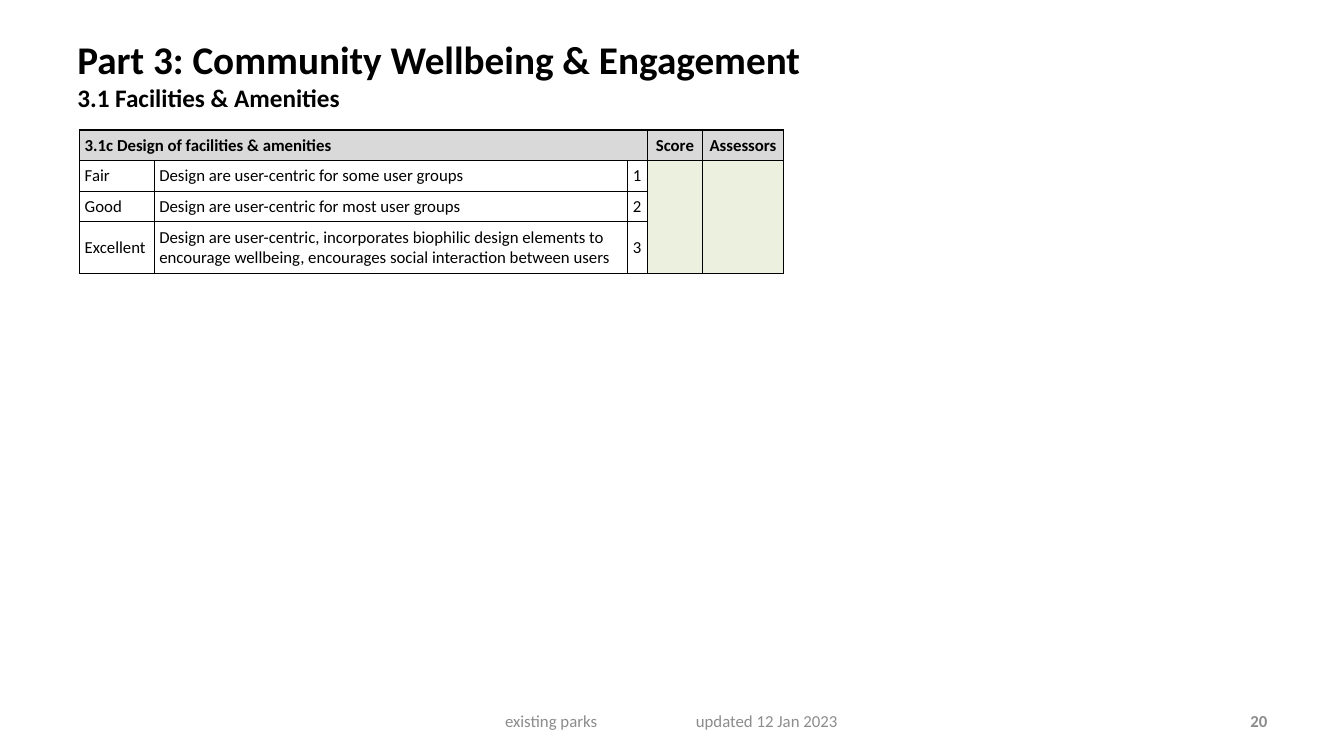
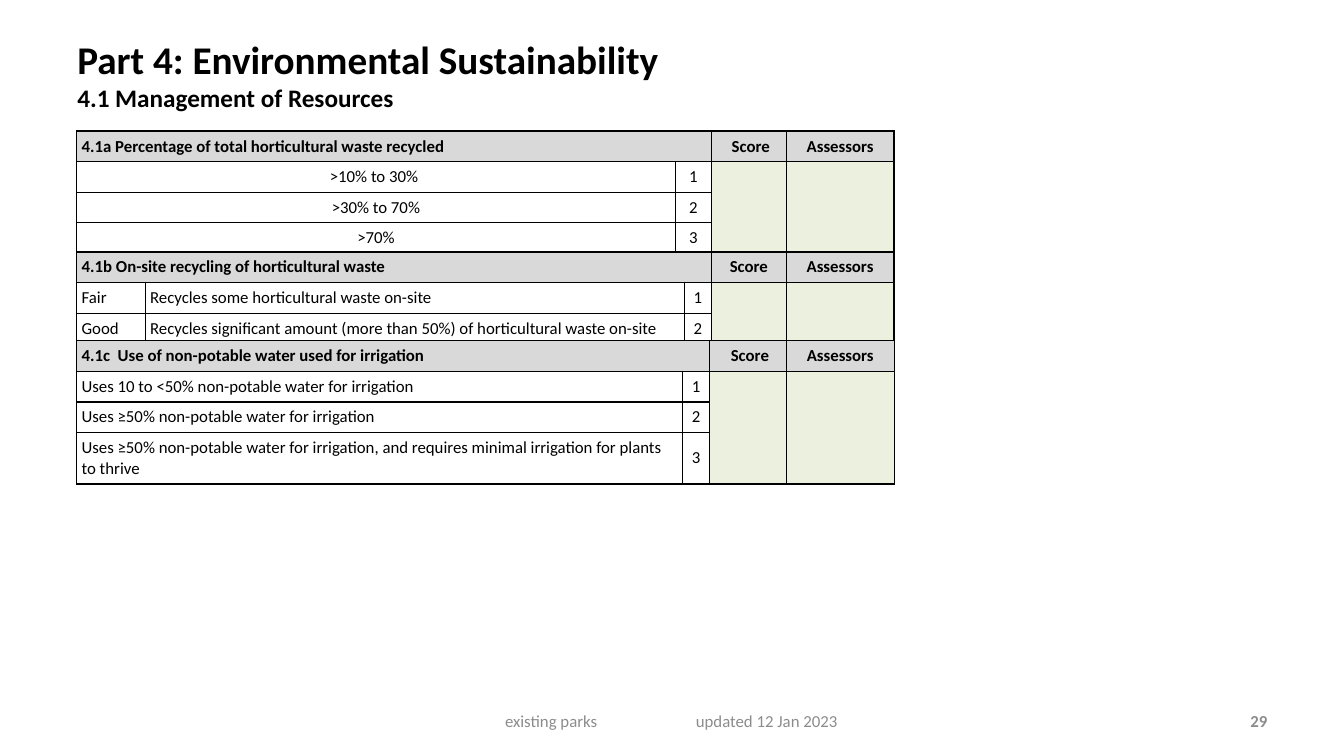
"""Build two score-sheet slides for the assessment of existing parks."""
from dataclasses import dataclass

from lxml import etree
from pptx import Presentation
from pptx import util as u
from pptx.dml.color import RGBColor
from pptx.enum import text
from pptx.oxml import ns


@dataclass(frozen=True)
class Theme:
    font: str = "Calibri"
    ink: str = "000000"
    muted: str = "8C8C8C"
    heading: str = "D9D9D9"
    entry: str = "EBF1DE"
    paper: str = "FFFFFF"
    title_size: int = 28
    subtitle_size: int = 18
    body_size: int = 12
    border: float = 1


THEME = Theme()
LEFT, CENTER, RIGHT = text.PP_ALIGN.LEFT, text.PP_ALIGN.CENTER, text.PP_ALIGN.RIGHT
LINE, TALL_LINE = 4.05, 6.8

SLIDES = [
    dict(
        title="Part 3: Community Wellbeing & Engagement",
        subtitle="3.1 Facilities & Amenities",
        number="20",
        criteria=[
            dict(
                left=5.93, top=17.2, columns=[5.55, 35.18, 1.5, 4.13, 6],
                heading="3.1c Design of facilities & amenities", score="Score",
                align=LEFT, last_line=TALL_LINE,
                levels=[
                    ["Fair", "Design are user-centric for some user groups", "1"],
                    ["Good", "Design are user-centric for most user groups", "2"],
                    ["Excellent", "Design are user-centric, incorporates biophilic design "
                     "elements to encourage wellbeing, encourages social interaction "
                     "between users", "3"],
                ],
            ),
        ],
    ),
    dict(
        title="Part 4: Environmental Sustainability",
        subtitle="4.1 Management of Resources",
        number="29",
        criteria=[
            dict(
                left=5.7, top=17.33, columns=[44.55, 2.7, 5.55, 8.03],
                heading="4.1a Percentage of total horticultural waste recycled",
                score=" Score", align=CENTER, last_line=LINE,
                levels=[[">10% to 30% ", "1"], [">30% to 70%", "2"], [">70%", "3"]],
            ),
            dict(
                left=5.7, top=33.33, columns=[5.1, 40.12, 2.03, 5.55, 8.03],
                heading="4.1b On-site recycling of horticultural waste",
                score="Score", align=LEFT, last_line=LINE,
                levels=[
                    ["Fair", "Recycles some horticultural waste on-site", "1"],
                    ["Good", "Recycles significant amount (more than 50%) of "
                     "horticultural waste on-site", "2"],
                ],
            ),
            dict(
                left=5.7, top=45.07, columns=[45.08, 2.03, 5.7, 8.03],
                heading="4.1c  Use of non-potable water used for irrigation",
                score=" Score", align=LEFT, last_line=TALL_LINE,
                levels=[
                    ["Uses 10 to <50% non-potable water for irrigation", "1"],
                    ["Uses ≥50% non-potable water for irrigation", "2"],
                    ["Uses ≥50% non-potable water for irrigation, and requires "
                     "minimal irrigation for plants to thrive", "3"],
                ],
            ),
        ],
    ),
]

deck = Presentation()
deck.slide_width, deck.slide_height = u.Inches(13.33), u.Inches(7.5)
COL, ROW = deck.slide_width / 100, deck.slide_height / 100


def style(paragraph, size, color, bold=False, align=LEFT):
    """Align a paragraph and format its runs."""
    paragraph.alignment = align
    for run in paragraph.runs:
        run.font.name, run.font.size, run.font.bold = THEME.font, u.Pt(size), bold
        run.font.color.rgb = RGBColor.from_string(color)


def format_cell(cell, fill):
    """Give a table cell its borders, margins, anchor and fill."""
    properties = cell._tc.get_or_add_tcPr()
    for side in ("a:lnL", "a:lnR", "a:lnT", "a:lnB"):
        edge = etree.SubElement(properties, ns.qn(side), w=str(u.Pt(THEME.border)))
        ink = etree.SubElement(edge, ns.qn("a:solidFill"))
        etree.SubElement(ink, ns.qn("a:srgbClr"), val=THEME.ink)
    cell.margin_left = cell.margin_right = u.Inches(0.05)
    cell.margin_top = cell.margin_bottom = u.Inches(0.05)
    cell.vertical_anchor = text.MSO_ANCHOR.MIDDLE
    cell.fill.solid()
    cell.fill.fore_color.rgb = RGBColor.from_string(fill)
    if not cell.text:
        ending = cell.text_frame.paragraphs[0]._p.get_or_add_endParaRPr()
        ending.set("sz", str(THEME.body_size * 100))


for page in SLIDES:
    slide = deck.slides.add_slide(deck.slide_layouts[5])

    title = slide.shapes.title
    title.left, title.top = int(5 * COL), int(4 * ROW)
    title.width, title.height = int(77.7 * COL), int(13.2 * ROW)
    title.text_frame.text = f"{page['title']}\v{page['subtitle']}"
    title.text_frame.auto_size = text.MSO_AUTO_SIZE.NONE
    title.text_frame.vertical_anchor = text.MSO_ANCHOR.TOP
    heading = title.text_frame.paragraphs[0]
    style(heading, THEME.title_size, THEME.ink, bold=True)
    heading.runs[1].font.size = u.Pt(THEME.subtitle_size)

    for criterion in page["criteria"]:
        columns, levels = criterion["columns"], criterion["levels"]
        heights = [LINE] * len(levels) + [criterion["last_line"]]
        sheet = slide.shapes.add_table(
            len(heights), len(columns),
            int(criterion["left"] * COL), int(criterion["top"] * ROW),
            int(sum(columns) * COL), int(sum(heights) * ROW)).table
        for column, width in zip(sheet.columns, columns):
            column.width = int(width * COL)
        for row, height in zip(sheet.rows, heights):
            row.height = int(height * ROW)

        score_at = len(columns) - 2
        points_at = score_at - 1
        captions = [criterion["heading"]] + [""] * points_at + [criterion["score"], "Assessors"]
        rows = [captions] + [level + ["", ""] for level in levels]
        for r, entries in enumerate(rows):
            for c, entry in enumerate(entries):
                cell = sheet.cell(r, c)
                cell.text = entry
                centred = c >= score_at or (r > 0 and c == points_at)
                align = CENTER if centred else criterion["align"] if r else LEFT
                style(cell.text_frame.paragraphs[0], THEME.body_size, THEME.ink, r == 0, align)
                body_fill = THEME.entry if c >= score_at else THEME.paper
                format_cell(cell, body_fill if r else THEME.heading)
        sheet.cell(0, 0).merge(sheet.cell(0, points_at))
        for c in (score_at, score_at + 1):
            sheet.cell(1, c).merge(sheet.cell(len(levels), c))

    footers = [
        ("existing parks\tupdated 12 Jan 2023", 34.2, 31.66, LEFT, False),
        (page["number"], 71.7, 23.33, RIGHT, True),
    ]
    for words, left, width, align, bold in footers:
        footer = slide.shapes.add_textbox(
            int(left * COL), int(92.67 * ROW), int(width * COL), int(5.33 * ROW)).text_frame
        footer.word_wrap = True
        footer.vertical_anchor = text.MSO_ANCHOR.MIDDLE
        footer.text = words
        line = footer.paragraphs[0]
        if "\t" in words:
            footer.margin_left = int(3.38 * COL)
            stops = etree.SubElement(line._p.get_or_add_pPr(), ns.qn("a:tabLst"))
            etree.SubElement(stops, ns.qn("a:tab"), pos=str(int(14.2 * COL)), algn="l")
        style(line, THEME.body_size, THEME.muted, bold, align)

deck.save("out.pptx")
